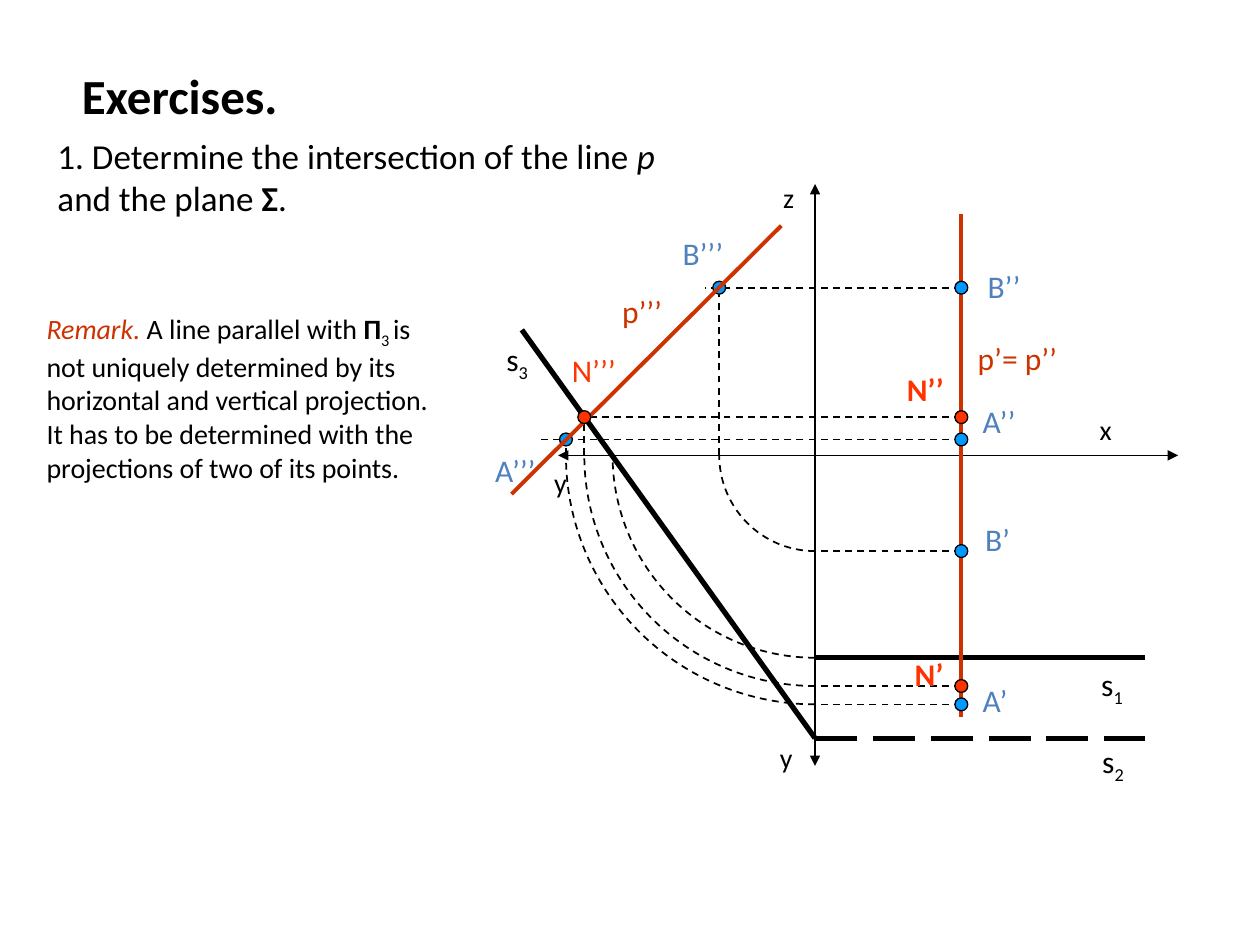
import pptx
import pptx.util
import pptx.dml.color
import pptx.enum.dml
import pptx.enum.shapes
import pptx.oxml.ns
from lxml import etree
from pptx.util import Cm

COLOURS = {
    "black": "000000",
    "line p": "CC3300",
    "given": "0099FF",
    "given label": "4F81BD",
    "result": "FF3300",
}
DASH = pptx.enum.dml.MSO_LINE.DASH
LONG_DASH = pptx.enum.dml.MSO_LINE.LONG_DASH

# Geometry of the drawing, in centimetres
ORIGIN_X, ORIGIN_Y = 16.43, 9.18
LINE_P_X = 19.38
TRACE_END_X = 23.09
TRACE_1_DEPTH, TRACE_2_DEPTH = 4.08, 5.7
DOT = 0.26

AXES = [
    ((11.25, ORIGIN_Y), (23.75, ORIGIN_Y)),
    ((ORIGIN_X, 15.44), (ORIGIN_X, 3.71)),
]
TRACE_3 = ((ORIGIN_X, ORIGIN_Y + TRACE_2_DEPTH), (10.52, 6.65))
LINE_P = ((LINE_P_X, 4.32), (LINE_P_X, 14.45))
LINE_P_PROFILE = ((10.31, 9.96), (15.75, 4.55))

# kind, depth, height, length of the dashed line beyond the profile point
POINTS = [
    ("given", 5.02, 0.32, 0.53),   # A
    ("given", 1.93, 3.38, 0.28),   # B
    ("result", 4.65, 0.77, 0),     # N
]

# left, top, width, size, colour, runs of (text, styles)
TEXTS = [
    (1.4, 1.19, 4.5, 28, "black", [("Exercises.", "bold")]),
    (0.91, 2.59, 13.16, 20, "black", [
        ("1. Determine the intersection of the line ", ""), ("p ", "italic"),
        ("and the plane ", ""), ("Σ", "bold"), (".", "")]),
    (0.69, 6.15, 8.43, 16, "black", [
        ("Remark.", "italic red"), (" A line parallel with ", ""),
        ("Π", "bold"), ("3 ", "sub"),
        ("is not uniquely determined by its horizontal and vertical "
         "projection. It has to be determined with the projections of two "
         "of its points.", "")]),
    (21.92, 8.2, 1.55, 16, "black", [("x", "")]),
    (15.54, 3.51, 1.27, 16, "black", [("z", "")]),
    (15.47, 14.81, 1.07, 16, "black", [("y", "")]),
    (10.92, 9.27, 1.22, 16, "black", [("y", "")]),
    (21.95, 13.28, 1.3, 18, "black", [("s", ""), ("1", "sub")]),
    (21.97, 14.83, 1.55, 18, "black", [("s", ""), ("2", "sub")]),
    (9.96, 6.73, 1.37, 18, "black", [("s", ""), ("3", "sub")]),
    (19.46, 6.71, 2.95, 18, "line p", [("p’= p’’", "")]),
    (12.29, 5.77, 1.57, 18, "line p", [("p’’’", "")]),
    (19.56, 13.61, 1.37, 18, "given label", [("A’", "")]),
    (19.56, 7.98, 1.52, 18, "given label", [("A’’", "")]),
    (9.73, 8.97, 2.08, 18, "given label", [("A’’’", "")]),
    (19.61, 10.36, 1.4, 18, "given label", [("B’", "")]),
    (19.66, 5.26, 1.7, 18, "given label", [("B’’", "")]),
    (13.51, 4.6, 1.6, 18, "given label", [("B’’’", "")]),
    (18.19, 13.08, 1.27, 18, "result", [("N’", "bold")]),
    (18.03, 7.34, 1.42, 18, "result", [("N’’", "bold")]),
    (11.28, 6.96, 1.7, 18, "result", [("N’’’", "")]),
]

presentation = pptx.Presentation()
presentation.slide_width, presentation.slide_height = Cm(25.4), Cm(19.05)
slide = presentation.slides.add_slide(presentation.slide_layouts[6])
shapes = slide.shapes


def rgb(name):
    return pptx.dml.color.RGBColor.from_string(COLOURS[name])


def style_line(line, width, colour="black", dash=None):
    line.color.rgb = rgb(colour)
    line.width = pptx.util.Pt(width)
    if dash is not None:
        line.dash_style = dash


def add_line(start, end, width, colour="black", dash=None, arrows=False):
    connector = shapes.add_connector(
        pptx.enum.shapes.MSO_CONNECTOR.STRAIGHT,
        *(Cm(value) for value in (*start, *end)))
    style_line(connector.line, width, colour, dash)
    properties = connector._element.spPr
    if arrows:
        outline = properties.find(pptx.oxml.ns.qn("a:ln"))
        for tag in ("a:headEnd", "a:tailEnd"):
            etree.SubElement(outline, pptx.oxml.ns.qn(tag), type="triangle")
    etree.SubElement(properties, pptx.oxml.ns.qn("a:effectLst"))


def add_round(preset, x, y, radius):
    """Add a preset shape that fills the circle around (x, y)."""
    shape = shapes.add_shape(preset, Cm(x - radius), Cm(y - radius),
                             Cm(2 * radius), Cm(2 * radius))
    shape.shadow.inherit = False
    return shape


def add_arc(depth):
    """Turn a depth from the y axis below the origin to the y axis left of it."""
    arc = add_round(pptx.enum.shapes.MSO_SHAPE.ARC, ORIGIN_X, ORIGIN_Y, depth)
    # Arc angles count 60000 to the degree, adjustments 100000 to the unit
    arc.adjustments[0], arc.adjustments[1] = 90 * 0.6, 180 * 0.6
    arc.fill.background()
    style_line(arc.line, 1, dash=DASH)


def add_dot(x, y, colour):
    dot = add_round(pptx.enum.shapes.MSO_SHAPE.OVAL, x, y, DOT / 2)
    dot.fill.solid()
    dot.fill.fore_color.rgb = rgb(colour)
    style_line(dot.line, 0.75)


def add_text(left, top, width, size, colour, runs):
    box = shapes.add_textbox(Cm(left), Cm(top), Cm(width), Cm(size * 0.056))
    box.text_frame.word_wrap = True
    paragraph = box.text_frame.paragraphs[0]
    paragraph.font.name = "Calibri"
    paragraph.font.size = pptx.util.Pt(size)
    paragraph.font.color.rgb = rgb(colour)
    for text, styles in runs:
        run = paragraph.add_run()
        run.text = text
        if "bold" in styles:
            run.font.bold = True
        if "italic" in styles:
            run.font.italic = True
        if "red" in styles:
            run.font.color.rgb = rgb("line p")
        if "sub" in styles:
            run._r.get_or_add_rPr().set("baseline", "-25000")


for start, end in AXES:
    add_line(start, end, 0.75, arrows=True)
for depth, dash in ((TRACE_1_DEPTH, None), (TRACE_2_DEPTH, LONG_DASH)):
    y = ORIGIN_Y + depth
    add_line((ORIGIN_X, y), (TRACE_END_X, y), 3, dash=dash)
add_line(*TRACE_3, 3)
add_line(*LINE_P, 2.25, "line p")
add_arc(TRACE_1_DEPTH)

for kind, depth, height, beyond in POINTS:
    profile_x = ORIGIN_X - depth
    upper_y, lower_y = ORIGIN_Y - height, ORIGIN_Y + depth
    add_line((LINE_P_X, upper_y), (profile_x - beyond, upper_y), 1, dash=DASH)
    add_line((LINE_P_X, lower_y), (ORIGIN_X, lower_y), 1, dash=DASH)
    add_line((profile_x, ORIGIN_Y), (profile_x, upper_y), 1, dash=DASH)
    add_arc(depth)
    if kind == "result":  # the profile of p lies over A and B, under N
        add_line(*LINE_P_PROFILE, 2.25, "line p")
    for x, y in ((profile_x, upper_y), (LINE_P_X, upper_y), (LINE_P_X, lower_y)):
        add_dot(x, y, kind)

for text in TEXTS:
    add_text(*text)

presentation.save("out.pptx")
